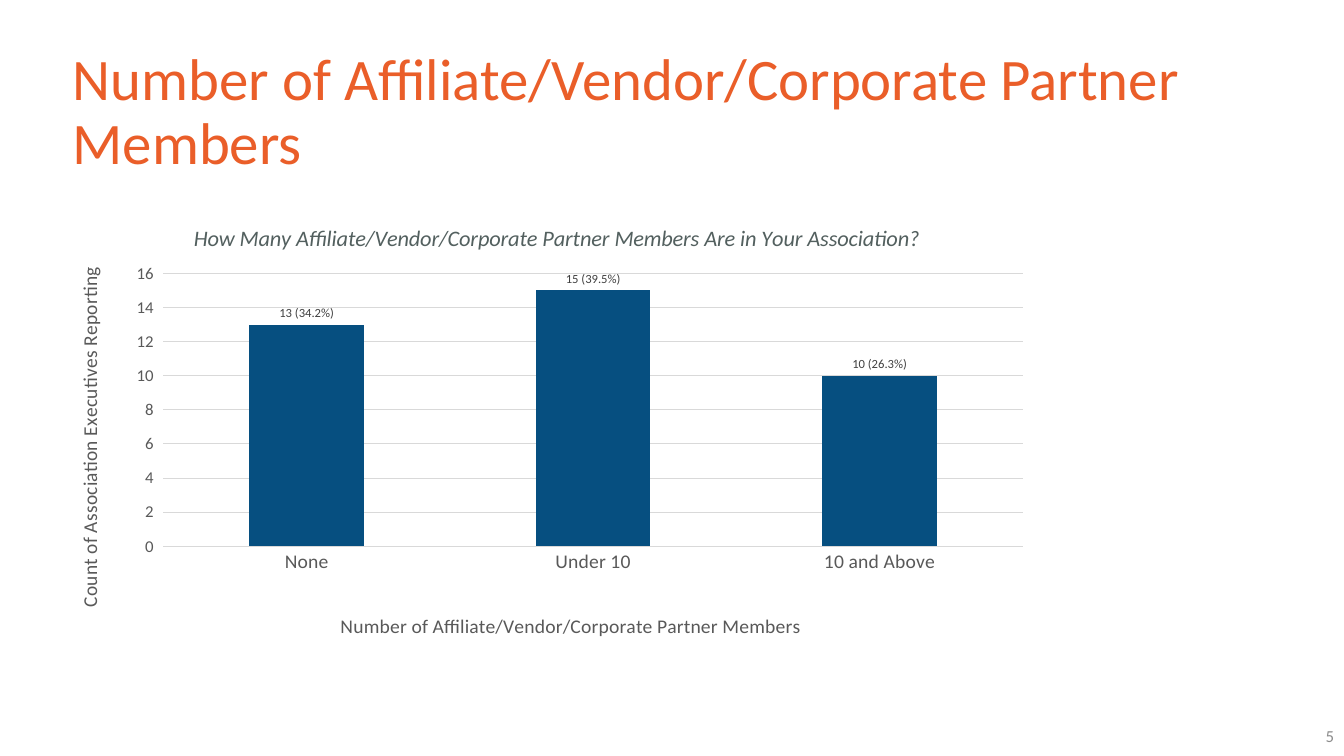
from dataclasses import dataclass

from lxml import etree
from pptx import Presentation
from pptx.chart.data import CategoryChartData
from pptx.dml.color import RGBColor
from pptx.enum.chart import XL_CHART_TYPE, XL_LABEL_POSITION, XL_TICK_MARK
from pptx.enum.text import MSO_ANCHOR, MSO_AUTO_SIZE, PP_ALIGN
from pptx.oxml.ns import qn
from pptx.util import Inches, Pt

COLUMN = XL_CHART_TYPE.COLUMN_CLUSTERED
OUT_END = XL_LABEL_POSITION.OUTSIDE_END
NO_TICK, TICK_OUT = XL_TICK_MARK.NONE, XL_TICK_MARK.OUTSIDE
MIDDLE = MSO_ANCHOR.MIDDLE
LEFT, RIGHT = PP_ALIGN.LEFT, PP_ALIGN.RIGHT
NO_FIT = MSO_AUTO_SIZE.NONE


@dataclass(frozen=True)
class Theme:
    face: str = "Calibri"
    orange: str = "EA5E29"
    blue: str = "064F80"
    slate: str = "53605F"
    axis: str = "595959"
    label: str = "404040"
    page: str = "8C8C8C"
    grid: str = "D9D9D9"
    head_size: int = 42
    chart_size: int = 16
    axis_size: int = 14
    small_size: int = 12
    label_size: int = 9


theme = Theme()


def style(font, size, color, italic=False):
    font.name = theme.face
    font.size = Pt(size)
    font.bold = False
    font.italic = italic
    font.color.rgb = RGBColor.from_string(color)


def place(node, index, **spots):
    """Give a chart part a manual layout, in fractions of the chart."""
    for old in node.findall(qn("c:layout")):
        node.remove(old)
    layout = etree.Element(qn("c:layout"))
    manual = etree.SubElement(layout, qn("c:manualLayout"))
    for tag, value in spots.items():
        etree.SubElement(manual, qn(f"c:{tag}")).set("val", str(value))
    node.insert(index, layout)


prs = Presentation()
prs.slide_width, prs.slide_height = Inches(13.33), Inches(7.5)
slide = prs.slides.add_slide(prs.slide_layouts[5])

# Heading
head = slide.shapes.title
head.left, head.top = Inches(0.62), Inches(0.4)
head.width, head.height = Inches(12.1), Inches(1.45)
frame = head.text_frame
frame.text = "Number of Affiliate/Vendor/Corporate Partner Members"
frame.word_wrap = True
frame.auto_size = NO_FIT
frame.vertical_anchor = MIDDLE
para = frame.paragraphs[0]
para.alignment = LEFT
para.line_spacing = 0.9
style(para.font, theme.head_size, theme.orange)

# Chart
data = CategoryChartData()
data.categories = ["None", "Under 10", "10 and Above"]
data.add_series("Series 1", [13, 15, 10])
chart = slide.shapes.add_chart(
    COLUMN, Inches(0.62), Inches(2), Inches(9.72), Inches(4.39), data
).chart
chart.has_legend = False
chart.font.name = theme.face
chart.has_title = True
chart.chart_title.include_in_layout = False

plot = chart.plots[0]
plot.gap_width = 150
plot.vary_by_categories = False
bars = plot.series[0]
bars.format.fill.solid()
bars.format.fill.fore_color.rgb = RGBColor.from_string(theme.blue)
for index, text in enumerate(["13 (34.2%)", "15 (39.5%)", "10 (26.3%)"]):
    label = bars.points[index].data_label
    label.text_frame.text = text
    style(label.text_frame.paragraphs[0].font, theme.label_size, theme.label)
    label.position = OUT_END

# Axes
cats, vals = chart.category_axis, chart.value_axis
cats.major_tick_mark = NO_TICK
vals.major_tick_mark = TICK_OUT
vals.minimum_scale, vals.maximum_scale, vals.major_unit = 0, 16, 2
style(cats.tick_labels.font, theme.axis_size, theme.axis)
style(vals.tick_labels.font, theme.small_size, theme.axis)
vals.format.line.fill.background()
for line in (cats.format.line, vals.major_gridlines.format.line):
    line.color.rgb = RGBColor.from_string(theme.grid)
    line.width = Pt(0.75)

# Chart and axis titles
titles = [
    (chart.chart_title, theme.chart_size, theme.slate, True, 0.13, 0.04,
     "How Many Affiliate/Vendor/Corporate Partner Members Are in Your Association?"),
    (cats.axis_title, theme.axis_size, theme.axis, False, 0.28, 0.93,
     "Number of Affiliate/Vendor/Corporate Partner Members"),
    (vals.axis_title, theme.axis_size, theme.axis, False, 0.01, 0.15,
     "Count of Association Executives Reporting"),
]
for title, size, color, italic, x, y, text in titles:
    title.text_frame.text = text
    style(title.text_frame.paragraphs[0].font, size, color, italic)
    place(title._element, 1, xMode="edge", yMode="edge", x=x, y=y)
body = vals.axis_title._element.find(".//" + qn("a:bodyPr"))
body.set("rot", "-5400000")
body.set("vert", "horz")

area = chart._chartSpace.find(".//" + qn("c:plotArea"))
place(area, 0, layoutTarget="inner", xMode="edge", yMode="edge",
      x=0.103, y=0.164, w=0.877, h=0.624)

# Page number
page = slide.shapes.add_textbox(Inches(10.33), Inches(7.1), Inches(3), Inches(0.4))
frame = page.text_frame
frame.text = "5"
frame.word_wrap = True
frame.vertical_anchor = MIDDLE
para = frame.paragraphs[0]
para.alignment = RIGHT
style(para.font, theme.small_size, theme.page)

prs.save("out.pptx")
